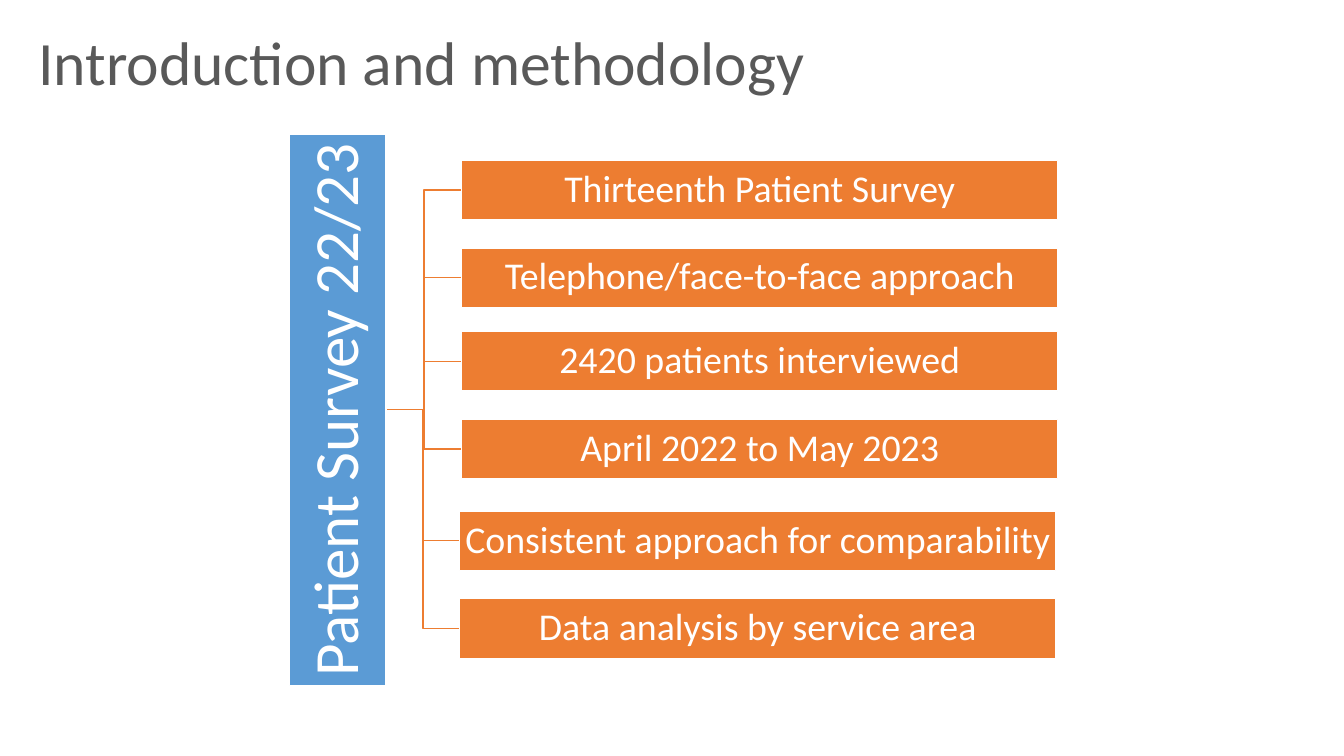
import pptx
import pptx.dml.color
import pptx.enum.shapes
import pptx.enum.text
import pptx.util

Inches = pptx.util.Inches
ALIGN = pptx.enum.text.PP_ALIGN
BLUE = pptx.dml.color.RGBColor(0x5B, 0x9B, 0xD5)
ORANGE = pptx.dml.color.RGBColor(0xED, 0x7D, 0x31)
WHITE = pptx.dml.color.RGBColor(0xFF, 0xFF, 0xFF)
GREY = pptx.dml.color.RGBColor(0x59, 0x59, 0x59)

TOPICS = [
    ("Thirteenth Patient Survey", 0.75, 0.26),
    ("Telephone/face-to-face approach", 0.75, 1.13),
    ("2420 patients interviewed", 0.75, 1.96),
    ("April 2022 to May 2023", 0.75, 2.83),
    ("Consistent approach for comparability", 0.73, 3.74),
    ("Data analysis by service area", 0.73, 4.61),
]


def write_text(frame, text, size, color, align):
    """Put one formatted line of text, centred vertically, in a frame."""
    frame.word_wrap = True
    frame.vertical_anchor = pptx.enum.text.MSO_ANCHOR.MIDDLE
    paragraph = frame.paragraphs[0]
    paragraph.alignment = align
    paragraph.line_spacing = 0.9
    run = paragraph.add_run()
    run.text = text
    run.font.size = pptx.util.Pt(size)
    run.font.name = "Calibri"
    run.font.color.rgb = color


def add_title(slide, left, top, width, height):
    """Place the slide title in the given box."""
    title = slide.shapes.title
    title.left, title.top = Inches(left), Inches(top)
    title.width, title.height = Inches(width), Inches(height)
    title.text_frame.auto_size = pptx.enum.text.MSO_AUTO_SIZE.NONE
    write_text(title.text_frame, "Introduction and methodology", 44, GREY, ALIGN.LEFT)


def add_label(slide, left, top, width, height, text, size, fill, inset, rotation=0):
    """Add a filled label box with white centred text."""
    label = slide.shapes.add_shape(
        pptx.enum.shapes.MSO_SHAPE.RECTANGLE,
        Inches(left), Inches(top), Inches(width), Inches(height))
    label.shadow.inherit = False
    label.rotation = rotation
    label.fill.solid()
    label.fill.fore_color.rgb = fill
    label.line.color.rgb = WHITE
    label.line.width = pptx.util.Pt(1)
    frame = label.text_frame
    frame.margin_left = frame.margin_right = Inches(inset)
    frame.margin_top = frame.margin_bottom = Inches(inset)
    write_text(frame, text, size, WHITE, ALIGN.CENTER)


def add_branch(slide, left, start_y, right, end_y):
    """Draw an elbow line that turns halfway between its two ends."""
    middle = (left + right) / 2
    builder = slide.shapes.build_freeform(Inches(left), Inches(start_y))
    corners = [(middle, start_y), (middle, end_y), (right, end_y)]
    builder.add_line_segments([(Inches(x), Inches(y)) for x, y in corners], close=False)
    branch = builder.convert_to_shape()
    branch.shadow.inherit = False
    branch.fill.background()
    branch.line.color.rgb = ORANGE
    branch.line.width = pptx.util.Pt(1)


def add_survey_tree(slide, left, top, width, height):
    """Draw the survey root on the left and its topics on the right."""
    root_width, topic_height = 0.96, 0.59
    root_right = left + root_width
    middle = top + height / 2
    for _, gap, offset in reversed(TOPICS):
        add_branch(slide, root_right, middle, root_right + gap, top + offset + topic_height / 2)
    add_label(slide, left + (root_width - height) / 2, middle - root_width / 2, height, root_width,
              "Patient Survey 22/23", 45, BLUE, 0.03, rotation=270)
    topic_width = width - root_width - 0.75
    for text, gap, offset in TOPICS:
        add_label(slide, root_right + gap, top + offset, topic_width, topic_height,
                  text, 27, ORANGE, 0.02)


def main():
    """Build and save the presentation."""
    presentation = pptx.Presentation()
    presentation.slide_width = Inches(13.33)
    presentation.slide_height = Inches(7.5)
    slide = presentation.slides.add_slide(presentation.slide_layouts[5])
    add_survey_tree(slide, 2.87, 1.33, 7.62, 5.47)
    add_title(slide, 0.28, 0.18, 12.63, 0.95)
    presentation.save("out.pptx")


if __name__ == "__main__":
    main()
